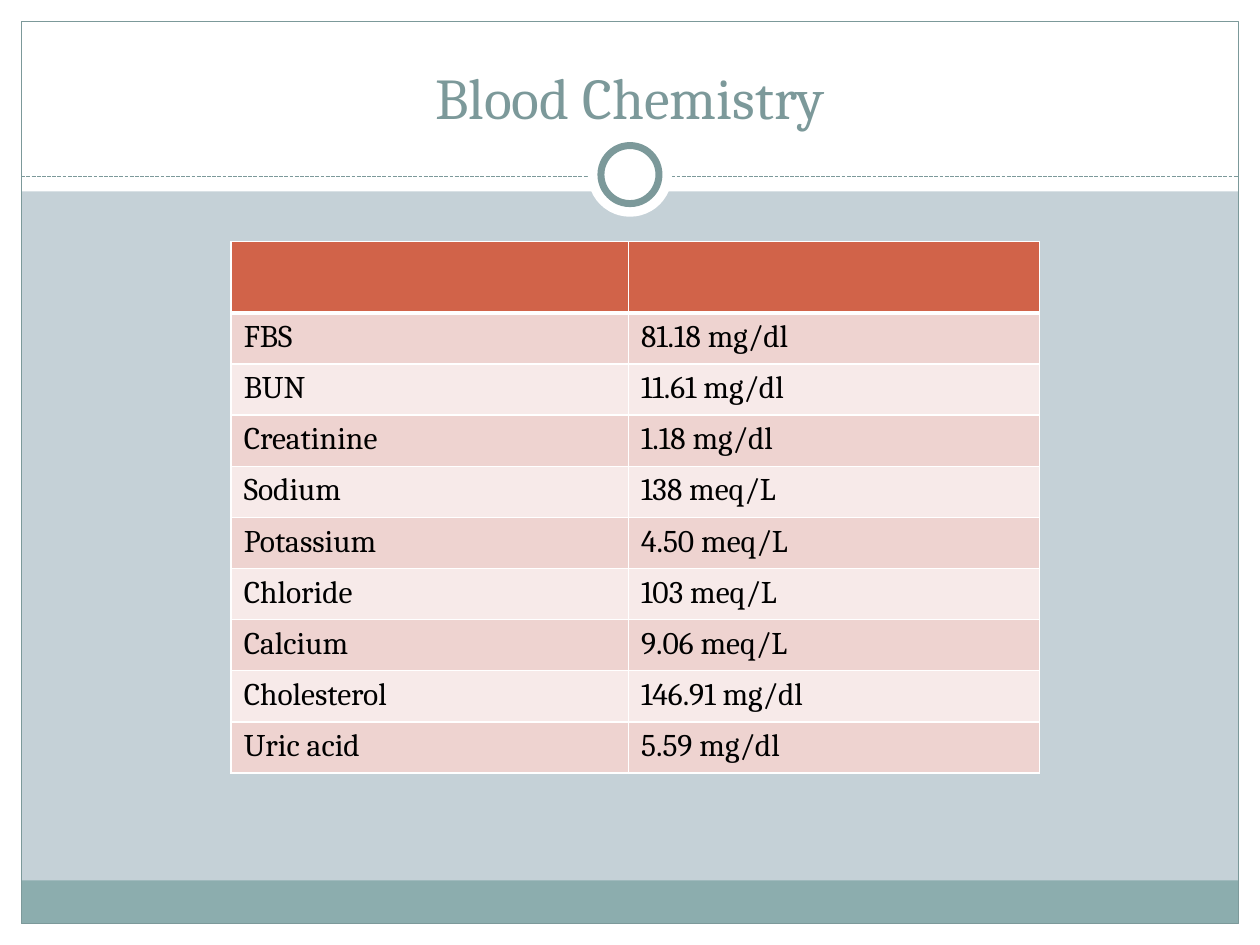
import pptx
import pptx.util
import pptx.dml.color
import pptx.enum.dml
import pptx.enum.shapes
import pptx.enum.text
import pptx.oxml
import pptx.oxml.ns

Cm = pptx.util.Cm
Pt = pptx.util.Pt
RGBColor = pptx.dml.color.RGBColor
MSO_SHAPE = pptx.enum.shapes.MSO_SHAPE

WHITE = RGBColor(0xFF, 0xFF, 0xFF)
BLACK = RGBColor(0x00, 0x00, 0x00)
BACKGROUND = RGBColor(0xC5, 0xD1, 0xD7)
FOOTER = RGBColor(0x8C, 0xAD, 0xAE)
ACCENT = RGBColor(0x7C, 0x99, 0x9A)
HEADER = RGBColor(0xD1, 0x63, 0x49)
BANDS = (RGBColor(0xEE, 0xD3, 0xD0), RGBColor(0xF7, 0xEA, 0xE9))

FONT = "Cambria"
WIDTH, HEIGHT = 25.4, 19.05
MARGIN = 0.43
INNER_WIDTH = WIDTH - 2 * MARGIN
HEADER_BOTTOM = 3.86
FOOTER_TOP, FOOTER_HEIGHT = 17.75, 0.87
RULE_Y = 3.56
RING_X, RING_Y = WIDTH / 2, 3.52

RESULTS = [
    ("FBS", "81.18 mg/dl"),
    ("BUN", "11.61 mg/dl"),
    ("Creatinine", "1.18 mg/dl"),
    ("Sodium", "138 meq/L"),
    ("Potassium", "4.50 meq/L"),
    ("Chloride", "103 meq/L"),
    ("Calcium", "9.06 meq/L"),
    ("Cholesterol", "146.91 mg/dl"),
    ("Uric acid", "5.59 mg/dl"),
]


def add_block(slide, kind, left, top, width, height, fill=None, line_width=None):
    sp = slide.shapes.add_shape(kind, Cm(left), Cm(top), Cm(width), Cm(height))
    sp.shadow.inherit = False
    if fill is None:
        sp.fill.background()
    else:
        sp.fill.solid()
        sp.fill.fore_color.rgb = fill
    if line_width is None:
        sp.line.fill.background()
    else:
        sp.line.color.rgb = ACCENT
        sp.line.width = Pt(line_width)


def add_circle(slide, diameter, line_width=None):
    add_block(slide, MSO_SHAPE.OVAL, RING_X - diameter / 2, RING_Y - diameter / 2,
              diameter, diameter, WHITE, line_width)


def add_dashed_rule(slide):
    cxn = slide.shapes.add_connector(
        pptx.enum.shapes.MSO_CONNECTOR.STRAIGHT,
        Cm(MARGIN), Cm(RULE_Y), Cm(WIDTH - MARGIN), Cm(RULE_Y))
    cxn.line.color.rgb = ACCENT
    cxn.line.width = Pt(0.75)
    cxn.line.dash_style = pptx.enum.dml.MSO_LINE.SQUARE_DOT
    sp_pr = cxn.element.find(pptx.oxml.ns.qn("p:spPr"))
    sp_pr.append(pptx.oxml.parse_xml(f"<a:effectLst {pptx.oxml.ns.nsdecls('a')}/>"))


def add_frame(slide):
    side = WIDTH - MARGIN
    for left, top, width, height, fill in (
        (0, HEIGHT - MARGIN, WIDTH, MARGIN, WHITE),
        (0, 0, WIDTH, HEADER_BOTTOM, WHITE),
        (0, 0, MARGIN, HEIGHT, WHITE),
        (side, 0, MARGIN, HEIGHT, WHITE),
        (MARGIN, FOOTER_TOP, INNER_WIDTH, FOOTER_HEIGHT, FOOTER),
    ):
        add_block(slide, MSO_SHAPE.RECTANGLE, left, top, width, height, fill)
    add_block(slide, MSO_SHAPE.RECTANGLE, MARGIN, MARGIN, INNER_WIDTH,
              HEIGHT - 2 * MARGIN, line_width=0.75)
    add_dashed_rule(slide)
    add_circle(slide, 1.7)
    add_circle(slide, 1.17, 4)


def add_title(slide, text):
    tb = slide.shapes.add_textbox(Cm(0.85), Cm(0.64), Cm(23.7), Cm(2.12))
    tf = tb.text_frame
    tf.word_wrap = True
    tf.vertical_anchor = pptx.enum.text.MSO_ANCHOR.BOTTOM
    p = tf.paragraphs[0]
    p.text = text
    p.alignment = pptx.enum.text.PP_ALIGN.CENTER
    p.font.name = FONT
    p.font.size = Pt(33)
    p.font.color.rgb = ACCENT


def style_cell(cell, fill, top=1, bottom=1):
    tc_pr = cell._tc.get_or_add_tcPr()
    for side, width in (("L", 1), ("R", 1), ("T", top), ("B", bottom)):
        tc_pr.append(pptx.oxml.parse_xml(
            f"<a:ln{side} {pptx.oxml.ns.nsdecls('a')} w='{Pt(width)}'>"
            f"<a:solidFill><a:srgbClr val='{WHITE}'/></a:solidFill></a:ln{side}>"))
    cell.fill.solid()
    cell.fill.fore_color.rgb = fill
    p = cell.text_frame.paragraphs[0]
    p.font.name = FONT
    p.font.size = Pt(18)
    p.font.color.rgb = BLACK


def add_results_table(slide):
    table = slide.shapes.add_table(
        len(RESULTS) + 1, 2, Cm(4.66), Cm(4.87), Cm(16.3), Cm(10.72)).table
    for column, width in zip(table.columns, (8.01, 8.29)):
        column.width = Cm(width)
    table.rows[0].height = Cm(1.44)
    for cell in table.rows[0].cells:
        style_cell(cell, HEADER, bottom=3)
    for i, result in enumerate(RESULTS):
        row = table.rows[i + 1]
        row.height = Cm(1.03)
        for cell, text in zip(row.cells, result):
            cell.text = text
            style_cell(cell, BANDS[i % 2], top=3 if i == 0 else 1)


def main():
    prs = pptx.Presentation()
    prs.slide_width, prs.slide_height = Cm(WIDTH), Cm(HEIGHT)
    slide = prs.slides.add_slide(prs.slide_layouts[6])
    slide.background.fill.solid()
    slide.background.fill.fore_color.rgb = BACKGROUND
    add_frame(slide)
    add_title(slide, "Blood Chemistry")
    add_results_table(slide)
    prs.save("out.pptx")


if __name__ == "__main__":
    main()
